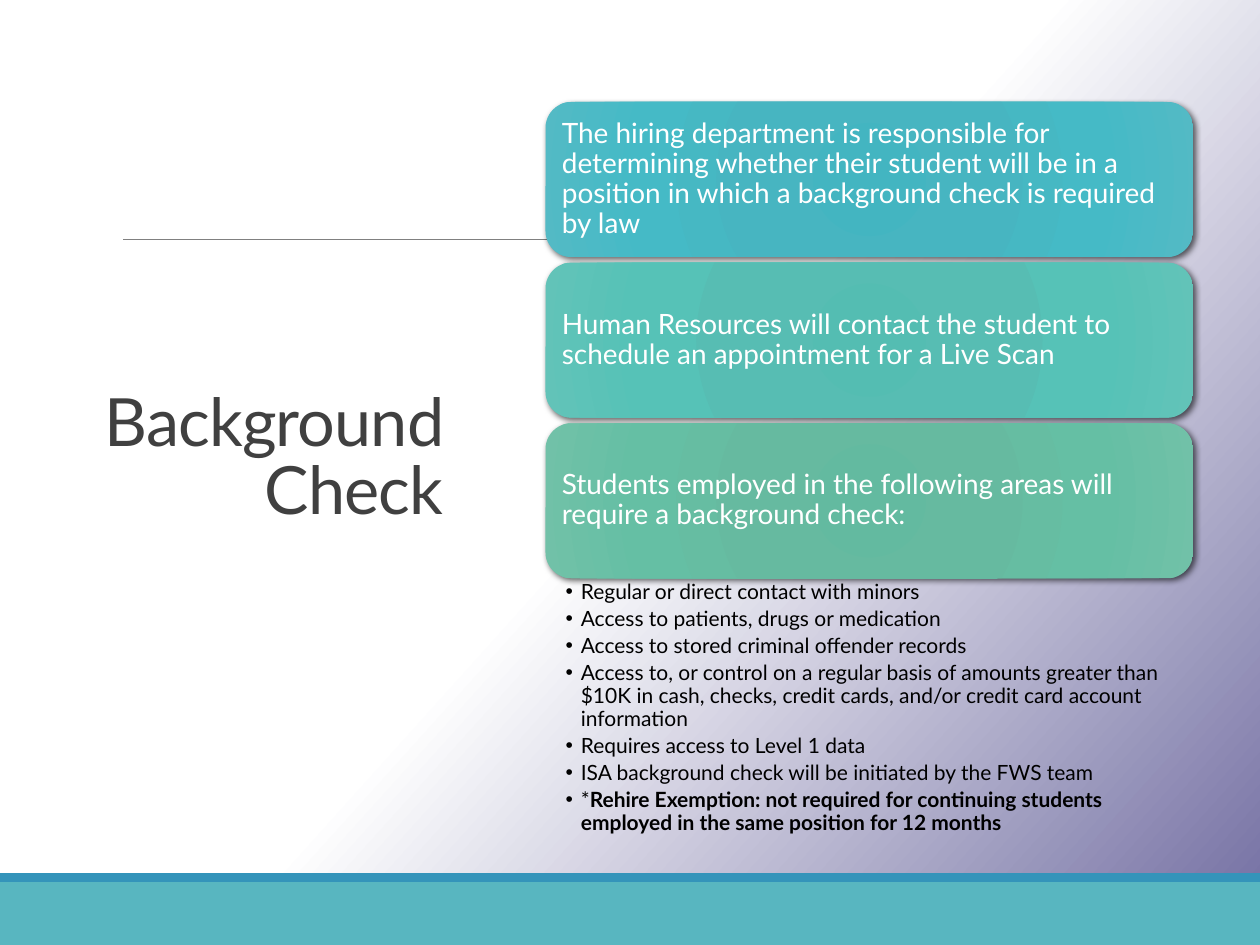
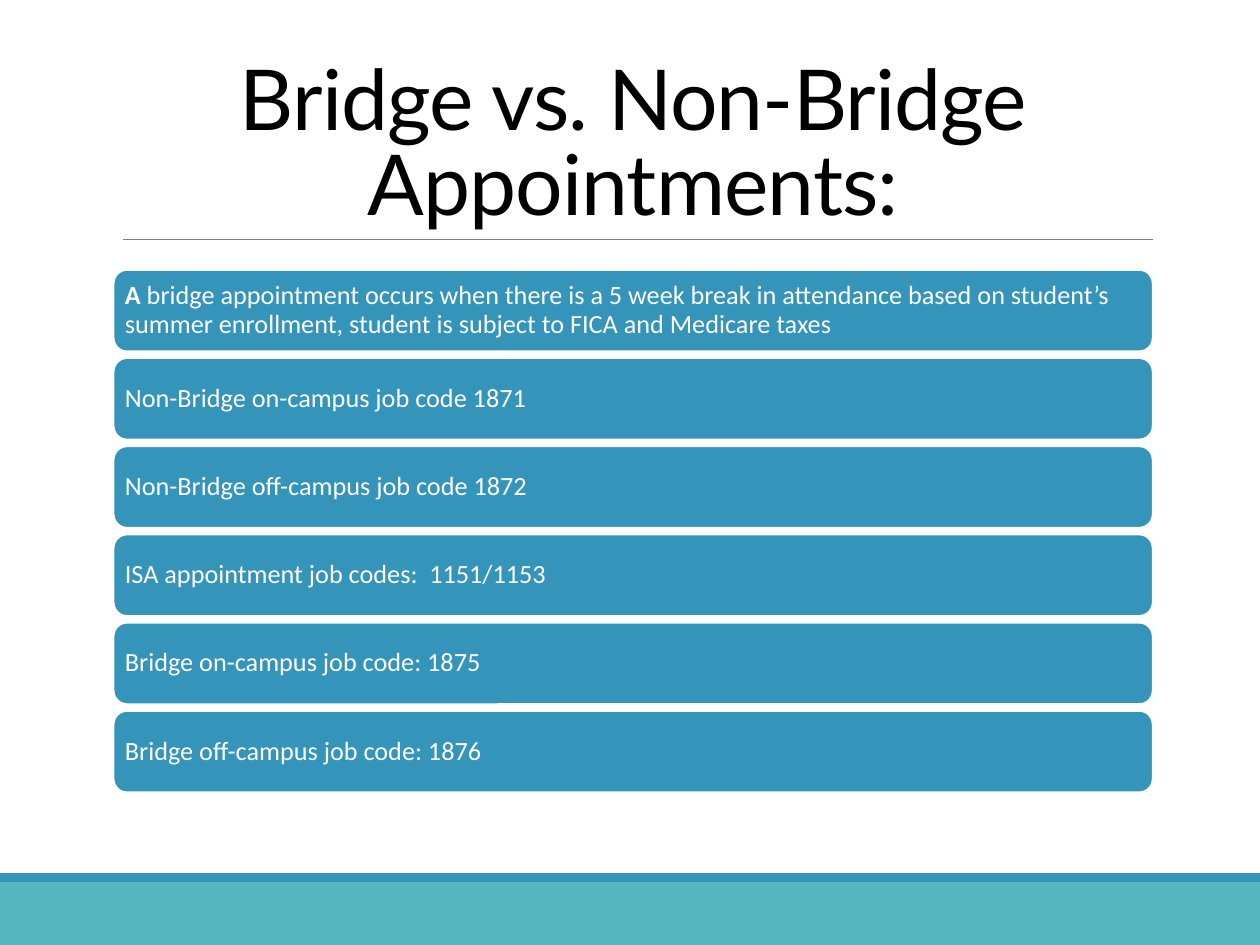
from dataclasses import dataclass

from lxml import etree
from pptx import Presentation
from pptx.dml.color import RGBColor
from pptx.enum.shapes import MSO_CONNECTOR, MSO_SHAPE
from pptx.enum.text import MSO_ANCHOR, MSO_AUTO_SIZE, PP_ALIGN
from pptx.oxml.ns import qn
from pptx.util import Inches, Pt

RECTANGLE, ROUNDED = MSO_SHAPE.RECTANGLE, MSO_SHAPE.ROUNDED_RECTANGLE
STRAIGHT = MSO_CONNECTOR.STRAIGHT
TOP, MIDDLE, BOTTOM = MSO_ANCHOR.TOP, MSO_ANCHOR.MIDDLE, MSO_ANCHOR.BOTTOM
LEFT, CENTER, RIGHT = PP_ALIGN.LEFT, PP_ALIGN.CENTER, PP_ALIGN.RIGHT
NO_AUTOFIT = MSO_AUTO_SIZE.NONE

WIDTH, HEIGHT = Inches(10), Inches(7.5)
COLUMNS, ROWS = 100, 75
TITLE_AND_CONTENT, TITLE_ONLY = 1, 5


@dataclass(frozen=True)
class Theme:
    """Colours, fonts and type sizes of the presentation."""
    white: str = "FFFFFF"
    black: str = "000000"
    charcoal: str = "404040"
    rule: str = "808080"
    teal: str = "58B6C0"
    blue: str = "3494BA"
    violet: str = "716DA1"
    duty_tints: tuple = (
        ("43B5C1", "47B5C1", "45BAC6", "53BAC5"),
        ("54BDB2", "57BDB3", "56C2B7", "62C3B8"),
        ("63BAA0", "66BAA0", "65BFA4", "71C1A8"),
    )
    tint_stops: tuple = (0, 34, 70, 100)
    heading_font: str = "Lato"
    code_font: str = "Calibri"
    side_title: int = 38
    wide_title: int = 48
    duty: int = 16
    code: int = 15
    area: int = 12


@dataclass(frozen=True)
class Box:
    """Region measured in grid columns and rows."""
    column: float
    row: float
    columns: float
    rows: float

    def emu(self):
        """Return left, top, width and height in slide units."""
        return (int(WIDTH * self.column / COLUMNS), int(HEIGHT * self.row / ROWS),
                int(WIDTH * self.columns / COLUMNS), int(HEIGHT * self.rows / ROWS))

    def stacked(self, count, gap):
        """Split the region into equal rows with a gap between them."""
        rows = (self.rows - gap * (count - 1)) / count
        return [Box(self.column, self.row + i * (rows + gap), self.columns, rows)
                for i in range(count)]


THEME = Theme()

DUTIES = (
    "The hiring department is responsible for determining whether their student "
    "will be in a position in which a background check is required by law",
    "Human Resources will contact the student to schedule an appointment for a Live Scan",
    "Students employed in the following areas will require a background check:",
)
AREAS = (
    "Regular or direct contact with minors",
    "Access to patients, drugs or medication",
    "Access to stored criminal offender records",
    "Access to, or control on a regular basis of amounts greater than $10K in cash, "
    "checks, credit cards, and/or credit card account information",
    "Requires access to Level 1 data",
    "ISA background check will be initiated by the FWS team",
    "*|Rehire Exemption: not required for continuing students employed in the same "
    "position for 12 months",
)
JOB_CODES = (
    "|A |bridge appointment occurs when there is a 5 week break in attendance based on "
    "student’s summer enrollment, student is subject to FICA and Medicare taxes",
    "Non-Bridge on-campus job code 1871",
    "Non-Bridge off-campus job code 1872",
    "ISA appointment job codes:  1151/1153",
    "Bridge on-campus job code: 1875",
    "Bridge off-campus job code: 1876",
)


def rgb(color):
    """Turn a hex string into a colour."""
    return RGBColor.from_string(color)


def child(parent, tag, **attributes):
    """Append a drawing element with the given attributes."""
    return etree.SubElement(parent, qn(tag), {k: str(v) for k, v in attributes.items()})


def fill_gradient(fill, owner, stops):
    """Give the owner a gradient of (percent, colour) stops and return its element."""
    fill.gradient()
    gradient = owner.find(".//" + qn("a:gradFill"))
    gradient.clear()
    stop_list = child(gradient, "a:gsLst")
    for percent, color in stops:
        stop = child(stop_list, "a:gs", pos=percent * 1000)
        child(stop, "a:srgbClr", val=color)
    return gradient


def format_frame(frame, anchor, insets):
    """Set wrapping, anchor and inner margins (left, top, right, bottom, in inches)."""
    frame.word_wrap = True
    frame.auto_size = NO_AUTOFIT
    frame.vertical_anchor = anchor
    (frame.margin_left, frame.margin_top,
     frame.margin_right, frame.margin_bottom) = map(Inches, insets)


def write(paragraph, text, font, size, color, align=LEFT, leading=0.9):
    """Write a paragraph; every second part between bars is bold."""
    paragraph.alignment = align
    paragraph.line_spacing = leading
    paragraph.space_before = Pt(0)
    paragraph.font.name = font
    paragraph.font.size = Pt(size)
    paragraph.font.color.rgb = rgb(color)
    for index, part in enumerate(text.split("|")):
        if part:
            run = paragraph.add_run()
            run.text = part
            if index % 2:
                run.font.bold = True


def place(placeholder, box):
    """Move a placeholder to a grid region."""
    (placeholder.left, placeholder.top,
     placeholder.width, placeholder.height) = box.emu()


def add_panel(slide, preset, box, color):
    """Add a flat preset shape without an outline."""
    panel = slide.shapes.add_shape(preset, *box.emu())
    panel.shadow.inherit = False
    panel.fill.solid()
    panel.fill.fore_color.rgb = rgb(color)
    panel.line.fill.background()
    return panel


def add_frame(slide):
    """Draw the footer bands and the title rule shared by all slides."""
    add_panel(slide, RECTANGLE, Box(0, 70, COLUMNS, 5), THEME.teal)
    add_panel(slide, RECTANGLE, Box(0, 69.3, COLUMNS, 0.7), THEME.blue)
    left, top, width, _ = Box(9.8, 19, 81.7, 0).emu()
    rule = slide.shapes.add_connector(STRAIGHT, left, top, left + width, top)
    rule.line.color.rgb = rgb(THEME.rule)
    rule.line.width = Pt(0.5)
    child(rule.element.spPr, "a:effectLst")


def add_title(slide, box, text, size, color, align):
    """Place and format the slide title."""
    title = slide.shapes.title
    place(title, box)
    format_frame(title.text_frame, BOTTOM, (0.1, 0.05, 0.1, 0.05))
    paragraph = title.text_frame.paragraphs[0]
    write(paragraph, text, THEME.heading_font, size, color, align, 0.85)
    for run in paragraph.runs:
        run.font._element.set("spc", "-50")


def add_duties(slide, box):
    """Stack the tinted duty cards with their shadows."""
    for text, tints, cell in zip(DUTIES, THEME.duty_tints, box.stacked(len(DUTIES), 0.45)):
        card = add_panel(slide, ROUNDED, cell, tints[0])
        properties = card.element.spPr
        gradient = fill_gradient(card.fill, properties, zip(THEME.tint_stops, tints))
        circle = child(gradient, "a:path", path="circle")
        child(circle, "a:fillToRect", **dict.fromkeys("ltrb", 100000))
        shadow = child(properties.find(qn("a:effectLst")), "a:outerShdw",
                       blurRad=Pt(3.5), dist=Pt(2), dir=45 * 60000, rotWithShape=0)
        shade = child(shadow, "a:srgbClr", val=THEME.black)
        child(shade, "a:alpha", val=60000)
        format_frame(card.text_frame, MIDDLE, [0.07] * 4)
        write(card.text_frame.paragraphs[0], text, THEME.heading_font, THEME.duty, THEME.white)


def add_areas(slide, box):
    """List the areas that need a check in the body placeholder."""
    areas = slide.placeholders[1]
    place(areas, box)
    frame = areas.text_frame
    format_frame(frame, TOP, (0.16, 0.02, 0.12, 0.02))
    for index, text in enumerate(AREAS):
        paragraph = frame.add_paragraph() if index else frame.paragraphs[0]
        write(paragraph, text, THEME.heading_font, THEME.area, THEME.black)
        paragraph.space_after = Pt(2.6)
        properties = paragraph._p.get_or_add_pPr()
        properties.set("marL", str(Inches(0.12)))
        properties.set("indent", str(Inches(-0.12)))
        child_position = properties.find(qn("a:defRPr"))
        bullet = etree.Element(qn("a:buChar"), {"char": "•"})
        child_position.addprevious(bullet)


def add_job_codes(slide, box):
    """Stack the job code bars."""
    for text, cell in zip(JOB_CODES, box.stacked(len(JOB_CODES), 0.5)):
        bar = add_panel(slide, ROUNDED, cell, THEME.blue)
        bar.line.color.rgb = rgb(THEME.white)
        bar.line.width = Pt(1.25)
        format_frame(bar.text_frame, MIDDLE, [0.06] * 4)
        write(bar.text_frame.paragraphs[0], text, THEME.code_font, THEME.code, THEME.white)


def build_background_check(deck):
    """Build the slide on background checks."""
    slide = deck.slides.add_slide(deck.slide_layouts[TITLE_AND_CONTENT])
    gradient = fill_gradient(slide.background.fill, slide.element,
                             ((0, THEME.white), (50, THEME.white), (100, THEME.violet)))
    child(gradient, "a:lin", ang=42 * 60000, scaled=0)
    add_frame(slide)
    add_title(slide, Box(5.5, 13.3, 30.7, 29.1), "Background Check",
              THEME.side_title, THEME.charcoal, RIGHT)
    add_duties(slide, Box(43.3, 8.1, 51.4, 37.8))
    add_areas(slide, Box(43.3, 45.9, 51.4, 21))


def build_appointments(deck):
    """Build the slide on bridge and non-bridge appointments."""
    slide = deck.slides.add_slide(deck.slide_layouts[TITLE_ONLY])
    slide.background.fill.solid()
    slide.background.fill.fore_color.rgb = rgb(THEME.white)
    add_frame(slide)
    add_title(slide, Box(9, 3.1, 82.5, 15.9), "Bridge vs. Non-Bridge Appointments:",
              THEME.wide_title, THEME.black, CENTER)
    add_job_codes(slide, Box(9, 21.4, 82.5, 41.5))


def main():
    """Build and save the presentation."""
    deck = Presentation()
    deck.slide_width, deck.slide_height = WIDTH, HEIGHT
    build_background_check(deck)
    build_appointments(deck)
    deck.save("out.pptx")


if __name__ == "__main__":
    main()
